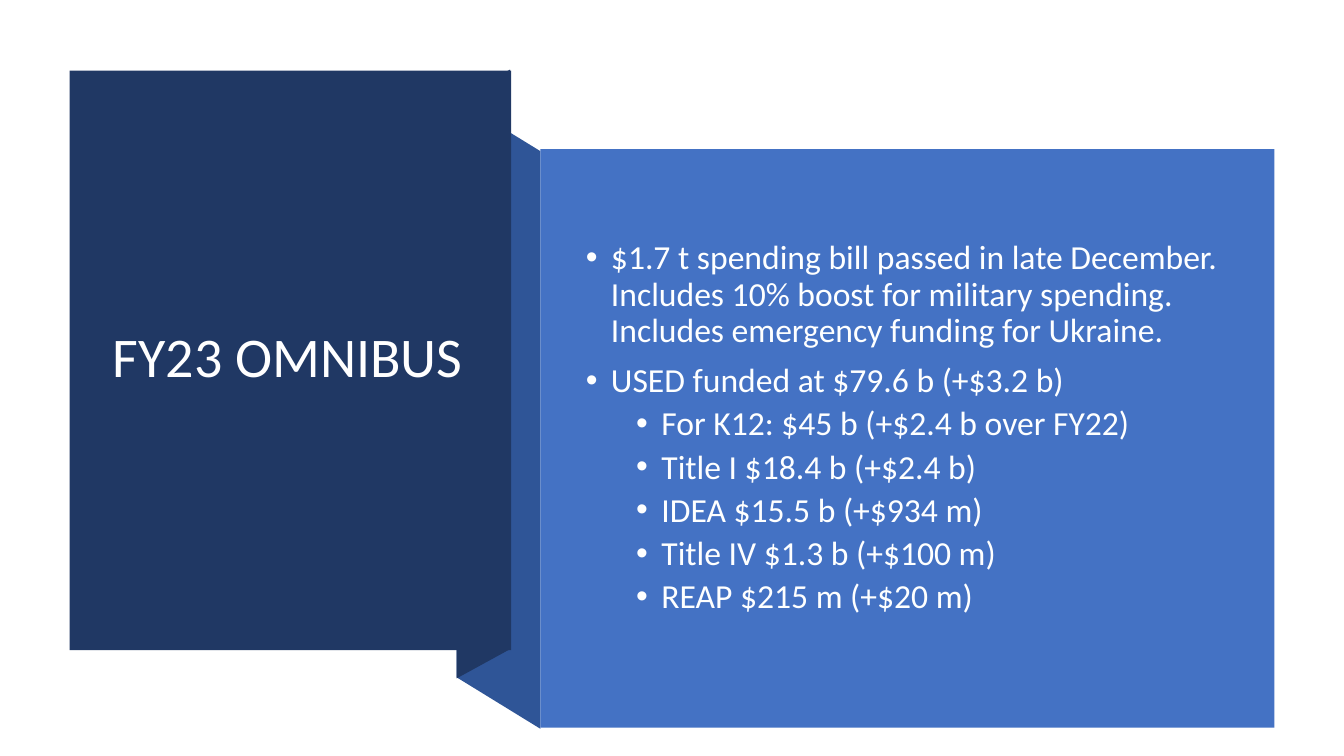
from lxml import etree
from pptx import Presentation
from pptx.dml.color import RGBColor
from pptx.enum.shapes import MSO_SHAPE
from pptx.enum.text import MSO_ANCHOR, MSO_AUTO_SIZE, PP_ALIGN
from pptx.oxml.ns import qn
from pptx.util import Inches, Pt

RECTANGLE = MSO_SHAPE.RECTANGLE
MIDDLE = MSO_ANCHOR.MIDDLE
NO_AUTOFIT = MSO_AUTO_SIZE.NONE
LEFT = PP_ALIGN.LEFT

FONT = "Calibri"
NAVY, FOLD_BLUE, BLUE = "203864", "2F5597", "4472C4"
WHITE, BODY_WHITE = "FFFFFF", "FEFFFF"

HEADING = "FY23 OMNIBUS"
POINTS = [  # (level, text)
    (0, "$1.7 t spending bill passed in late December. Includes 10% boost for "
        "military spending. Includes emergency funding for Ukraine."),
    (0, "USED funded at $79.6 b (+$3.2 b)"),
    (1, "For K12: $45 b (+$2.4 b over FY22)"),
    (1, "Title I $18.4 b (+$2.4 b)"),
    (1, "IDEA $15.5 b (+$934 m)"),
    (1, "Title IV $1.3 b (+$100 m)"),
    (1, "REAP $215 m (+$20 m)"),
]
LEVEL_INDENT = [0.25, 0.75]
LEVEL_SPACE = [10, 5]
HANGING = 0.25

# Ribbon folds, back to front: colour and corner points
FOLDS = [
    (FOLD_BLUE, [(5.36, 7.23), (4.53, 6.72), (4.53, 0.99), (5.36, 1.5)]),
    (NAVY, [(5.06, 6.44), (4.53, 6.73), (4.53, 0.98), (5.06, 0.69)]),
]
# Panels: colour and left, top, width, height
PANELS = [
    (NAVY, (0.69, 0.7, 4.38, 5.75)),
    (BLUE, (5.36, 1.48, 7.28, 5.74)),
]
TITLE_BOX = (1.02, 1.07, 3.71, 4.99)
BODY_BOX = (5.71, 1.88, 6.51, 4.74)


def rgb(value):
    return RGBColor.from_string(value)


def paint(shape, color):
    shape.shadow.inherit = False
    shape.fill.solid()
    shape.fill.fore_color.rgb = rgb(color)
    shape.line.fill.background()


def place(placeholder, box):
    """Position a placeholder, bring it to the front and return its text frame."""
    placeholder.left, placeholder.top, placeholder.width, placeholder.height = map(Inches, box)
    slide.shapes.element.append(placeholder.element)
    frame = placeholder.text_frame
    frame.word_wrap = True
    frame.auto_size = NO_AUTOFIT
    frame.vertical_anchor = MIDDLE
    return frame


def write(paragraph, text, size, color):
    paragraph.alignment = LEFT
    paragraph.line_spacing = 0.9
    run = paragraph.add_run()
    run.text = text
    run.font.name = FONT
    run.font.size = Pt(size)
    run.font.color.rgb = rgb(color)


def add_bullet(paragraph, indent):
    properties = paragraph._p.get_or_add_pPr()
    properties.set("marL", str(Inches(indent)))
    properties.set("indent", str(-Inches(HANGING)))
    etree.SubElement(properties, qn("a:buFont")).set("typeface", "Arial")
    etree.SubElement(properties, qn("a:buChar")).set("char", "•")


prs = Presentation()
prs.slide_width, prs.slide_height = Inches(13.33), Inches(7.5)
slide = prs.slides.add_slide(prs.slide_layouts[1])

for color, corners in FOLDS:
    start, *others = [(Inches(x), Inches(y)) for x, y in corners]
    outline = slide.shapes.build_freeform(*start)
    outline.add_line_segments(others, close=True)
    paint(outline.convert_to_shape(), color)

for color, box in PANELS:
    paint(slide.shapes.add_shape(RECTANGLE, *map(Inches, box)), color)

title = place(slide.shapes.title, TITLE_BOX)
write(title.paragraphs[0], HEADING, 40, WHITE)

body = place(slide.placeholders[1], BODY_BOX)
for number, (level, text) in enumerate(POINTS):
    point = body.add_paragraph() if number else body.paragraphs[0]
    point.level = level
    write(point, text, 24, BODY_WHITE)
    point.space_before = Pt(LEVEL_SPACE[level])
    add_bullet(point, LEVEL_INDENT[level])

prs.save("out.pptx")
